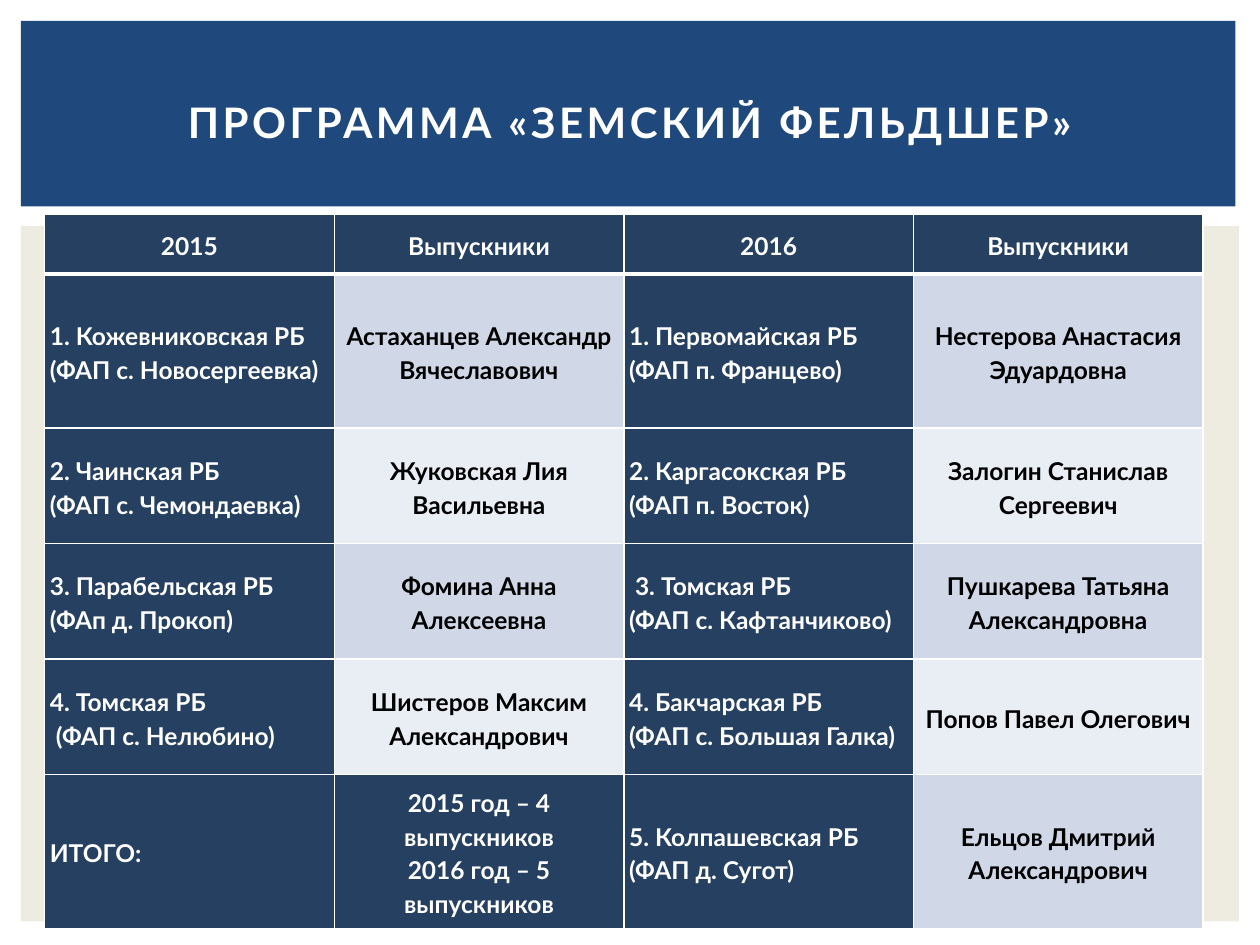
from dataclasses import dataclass

from lxml.etree import SubElement
from pptx import Presentation
from pptx.dml.color import RGBColor
from pptx.enum.shapes import MSO_SHAPE as Preset
from pptx.enum.text import MSO_ANCHOR as Anchor, MSO_AUTO_SIZE as AutoSize, PP_ALIGN as Align
from pptx.oxml.ns import qn
from pptx.util import Pt


@dataclass(frozen=True)
class Theme:
    font: str = "Lato"
    title_size: float = 24
    table_size: float = 14
    title_spacing: float = 2
    line_spacing: float = 1.15
    white: str = "FFFFFF"
    black: str = "000000"
    sand: str = "EEECE1"
    blue: str = "1F497D"
    navy: str = "254061"
    odd_row: str = "D0D8E8"
    even_row: str = "E9EDF4"


THEME = Theme()
TITLE = "ПРОГРАММА «ЗЕМСКИЙ ФЕЛЬДШЕР»"
ROW_HEIGHTS = [34, 88, 66, 66, 66, 88]
ROWS = [
    ["2015", "Выпускники", "2016", "Выпускники"],
    ["1. Кожевниковская РБ (ФАП с. Новосергеевка)", "Астаханцев Александр Вячеславович",
     "1. Первомайская РБ (ФАП п. Францево)", "Нестерова Анастасия Эдуардовна"],
    ["2. Чаинская РБ\n(ФАП с. Чемондаевка)", "Жуковская Лия Васильевна",
     "2. Каргасокская РБ (ФАП п. Восток)", "Залогин Станислав Сергеевич"],
    ["3. Парабельская РБ\n(ФАп д. Прокоп)", "Фомина Анна Алексеевна",
     " 3. Томская РБ\n(ФАП с. Кафтанчиково)", "Пушкарева Татьяна Александровна"],
    ["4. Томская РБ\n (ФАП с. Нелюбино)", "Шистеров Максим Александрович",
     "4. Бакчарская РБ\n(ФАП с. Большая Галка)", "Попов Павел Олегович"],
    ["ИТОГО:", "2015 год – 4 выпускников\n2016 год – 5 выпускников",
     "5. Колпашевская РБ (ФАП д. Сугот)", "Ельцов Дмитрий Александрович"],
]


def rgb(color):
    return RGBColor.from_string(color)


def add_run(paragraph, text, size, color):
    run = paragraph.add_run()
    run.text = text
    run.font.name = THEME.font
    run.font.size = Pt(size)
    run.font.bold = True
    run.font.color.rgb = rgb(color)


def add_panel(slide, box, color):
    panel = slide.shapes.add_shape(Preset.RECTANGLE, *map(Pt, box))
    panel.shadow.inherit = False
    panel.fill.solid()
    panel.fill.fore_color.rgb = rgb(color)
    panel.line.fill.background()


def add_title_band(slide, box):
    left, top, width, height = box
    add_panel(slide, box, THEME.blue)
    title = slide.shapes.title
    title.left, title.top = Pt(left + 18), Pt(top + 16)
    title.width, title.height = Pt(width - 34), Pt(height - 23)
    title.element.getparent().append(title.element)
    frame = title.text_frame
    frame.word_wrap = True
    frame.auto_size = AutoSize.NONE
    frame.vertical_anchor = Anchor.MIDDLE
    paragraph = frame.paragraphs[0]
    paragraph.alignment = Align.CENTER
    add_run(paragraph, TITLE, THEME.title_size, THEME.white)
    for properties in title.element.iter(qn("a:rPr")):
        properties.set("spc", str(int(THEME.title_spacing * 100)))


def cell_look(row, column):
    is_name = column % 2 == 1
    is_total = (row, column) == (len(ROWS) - 1, 1)
    align = Align.CENTER if row == 0 or is_name else Align.LEFT
    if row == 0 or is_total or not is_name:
        return THEME.navy, THEME.white, align
    return (THEME.odd_row if row % 2 else THEME.even_row), THEME.black, align


def fill_cell(cell, text, look):
    fill, color, align = look
    cell.vertical_anchor = Anchor.MIDDLE
    cell.margin_left = cell.margin_right = Pt(3)
    cell.margin_top = cell.margin_bottom = Pt(0)
    cell.fill.solid()
    cell.fill.fore_color.rgb = rgb(fill)
    for index, line in enumerate(text.split("\n")):
        frame = cell.text_frame
        paragraph = frame.add_paragraph() if index else frame.paragraphs[0]
        paragraph.alignment = align
        paragraph.line_spacing = THEME.line_spacing
        add_run(paragraph, line, THEME.table_size, color)


def add_borders(properties, row):
    widths = {"L": 1, "R": 1, "T": 3 if row == 1 else 1, "B": 3 if row == 0 else 1}
    for position, (side, width) in enumerate(widths.items()):
        line = SubElement(properties, qn(f"a:ln{side}"), w=str(Pt(width)))
        SubElement(SubElement(line, qn("a:solidFill")), qn("a:srgbClr"), val=THEME.white)
        properties.insert(position, line)


def add_graduates_table(slide, box):
    columns = len(ROWS[0])
    graphic = slide.shapes.add_table(len(ROWS), columns, *map(Pt, box))
    table = graphic.table
    table.horz_banding = False
    for column in table.columns:
        column.width = Pt(box[2] / columns)
    for row, (height, texts) in enumerate(zip(ROW_HEIGHTS, ROWS)):
        table.rows[row].height = Pt(height)
        for column, text in enumerate(texts):
            fill_cell(table.cell(row, column), text, cell_look(row, column))
    for index, properties in enumerate(graphic.element.iter(qn("a:tcPr"))):
        add_borders(properties, index // columns)


def main():
    presentation = Presentation()
    presentation.slide_width, presentation.slide_height = Pt(720), Pt(540)
    slide = presentation.slides.add_slide(presentation.slide_layouts[5])
    add_panel(slide, (12, 129, 696, 397.5), THEME.sand)
    add_title_band(slide, (12, 12, 694, 106))
    add_graduates_table(slide, (25.5, 122.5, 662, sum(ROW_HEIGHTS)))
    presentation.save("out.pptx")


if __name__ == "__main__":
    main()
